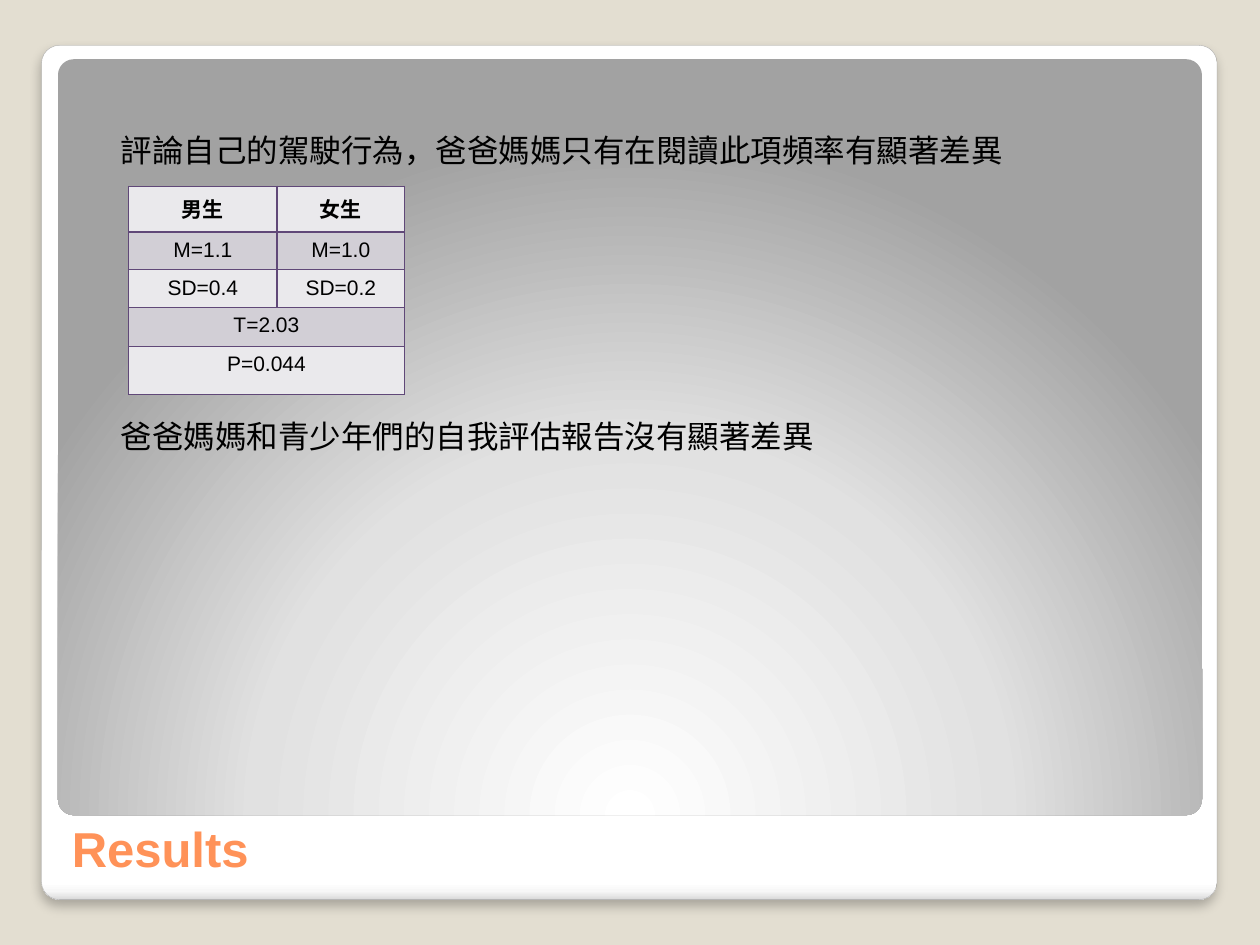
from dataclasses import dataclass

from pptx import Presentation
from pptx.dml.color import RGBColor
from pptx.enum.shapes import MSO_SHAPE
from pptx.enum.text import MSO_ANCHOR, PP_ALIGN
from pptx.oxml import parse_xml
from pptx.oxml.ns import nsdecls, qn
from pptx.util import Inches, Pt


@dataclass(frozen=True)
class Theme:
    font: str = "Arial"
    background: str = "E3DED1"
    card_edge: str = "A4A4A4"
    title: str = "FF9258"
    text: str = "000000"
    border: str = "604878"
    bands: tuple = ("EAE9EC", "D2CFD6")
    card_stops: tuple = ((0, "FFFFFF"), (98, "FFFFFF"), (99, "F7F7F7"), (100, "DADADA"))
    panel_stops: tuple = ((0, "FFFFFF"), (55, "E1E1E1"), (100, "A2A2A2"))
    title_size: int = 28
    body_size: int = 18
    table_size: int = 12


THEME = Theme()
NS = nsdecls("a")
DOWNWARD = '<a:lin ang="5400000" scaled="0"/>'
FROM_BELOW = ('<a:path path="circle">'
              '<a:fillToRect l="50000" t="175000" r="50000" b="-75000"/></a:path>')
FINDINGS = ("評論自己的駕駛行為，爸爸媽媽只有在閱讀此項頻率有顯著差異",
            "爸爸媽媽和青少年們的自我評估報告沒有顯著差異")
STATS = (("男生", "女生"), ("M=1.1", "M=1.0"), ("SD=0.4", "SD=0.2"),
         ("T=2.03",), ("P=0.044",))


def rgb(value):
    return RGBColor.from_string(value)


def inches(*values):
    return [Inches(v) for v in values]


def set_font(p, size, color, bold=False):
    p.font.name = THEME.font
    p.font.size = Pt(size)
    p.font.color.rgb = rgb(color)
    p.font.bold = bold


def add_gradient_box(s, box, stops, direction):
    sp = s.shapes.add_shape(MSO_SHAPE.ROUNDED_RECTANGLE, *inches(*box))
    sp.adjustments[0] = 0.021
    sp.shadow.inherit = False
    sp.line.fill.background()
    sp.fill.solid()
    stop_xml = "".join(f'<a:gs pos="{pos * 1000}"><a:srgbClr val="{color}"/></a:gs>'
                       for pos, color in stops)
    gradient = parse_xml(f'<a:gradFill {NS} rotWithShape="1">'
                         f'<a:gsLst>{stop_xml}</a:gsLst>{direction}</a:gradFill>')
    props = sp._element.spPr
    props.replace(props.find(qn("a:solidFill")), gradient)
    return sp


def add_card(s, box):
    sp = add_gradient_box(s, box, THEME.card_stops, DOWNWARD)
    sp.line.color.rgb = rgb(THEME.card_edge)
    sp.line.width = Pt(0.16)
    sp._element.spPr.find(qn("a:effectLst")).append(parse_xml(
        f'<a:outerShdw {NS} blurRad="{Pt(6)}" dist="{Pt(4)}" dir="5400000" '
        'algn="tl" rotWithShape="0"><a:srgbClr val="000000">'
        '<a:alpha val="25000"/></a:srgbClr></a:outerShdw>'))


def place_title(s, box, text):
    title = s.shapes.title
    title.left, title.top, title.width, title.height = inches(*box)
    tf = title.text_frame
    tf.text = text
    tf.vertical_anchor = MSO_ANCHOR.BOTTOM
    p = tf.paragraphs[0]
    p.alignment = PP_ALIGN.LEFT
    set_font(p, THEME.title_size, THEME.title, bold=True)
    title._element.getparent().append(title._element)  # in front of the card


def add_findings(s, box, findings):
    """Stack the findings, with room for the table between them."""
    tf = s.shapes.add_textbox(*inches(*box)).text_frame
    tf.word_wrap = True
    tf.margin_left, tf.margin_top = inches(0.41, 0.1)
    for i, text in enumerate(findings):
        p = tf.paragraphs[0] if i == 0 else tf.add_paragraph()
        p.text = text
        p.space_before = Pt(142 if i else 2.5)
        set_font(p, THEME.body_size, THEME.text)


def add_borders(cell):
    props = cell._tc.get_or_add_tcPr()
    for i, side in enumerate(("lnL", "lnR", "lnT", "lnB")):
        props.insert(i, parse_xml(
            f'<a:{side} {NS} w="{Pt(1)}"><a:solidFill>'
            f'<a:srgbClr val="{THEME.border}"/></a:solidFill></a:{side}>'))


def add_stats_table(s, box, rows, widths, heights):
    """Rows with a single value span the whole table."""
    table = s.shapes.add_table(len(rows), len(widths), *inches(*box)).table
    for column, width in zip(table.columns, widths):
        column.width = Inches(width)
    for i, (values, height) in enumerate(zip(rows, heights)):
        table.rows[i].height = Inches(height)
        for j in range(len(widths)):
            cell = table.cell(i, j)
            cell.fill.solid()
            cell.fill.fore_color.rgb = rgb(THEME.bands[i % 2])
            add_borders(cell)
        if len(values) == 1:
            table.cell(i, 0).merge(table.cell(i, len(widths) - 1))
        for j, value in enumerate(values):
            p = table.cell(i, j).text_frame.paragraphs[0]
            p.text = value
            p.alignment = PP_ALIGN.CENTER
            set_font(p, THEME.table_size, THEME.text, bold=i == 0)


def build_results_slide(prs):
    s = prs.slides.add_slide(prs.slide_layouts[5])
    s.background.fill.solid()
    s.background.fill.fore_color.rgb = rgb(THEME.background)
    add_card(s, (0.33, 0.36, 9.33, 6.78))
    add_gradient_box(s, (0.46, 0.47, 9.08, 6), THEME.panel_stops, FROM_BELOW)
    place_title(s, (0.47, 5.86, 8.95, 1.15), "Results")
    add_findings(s, (0.55, 0.94, 8.95, 4.58), FINDINGS)
    add_stats_table(s, (1.02, 1.48, 2.19, 1.65), STATS,
                    widths=(1.18, 1.01), heights=(0.36, 0.29, 0.29, 0.31, 0.38))


def main():
    prs = Presentation()
    prs.slide_width, prs.slide_height = inches(10, 7.5)
    build_results_slide(prs)
    prs.save("out.pptx")


if __name__ == "__main__":
    main()
